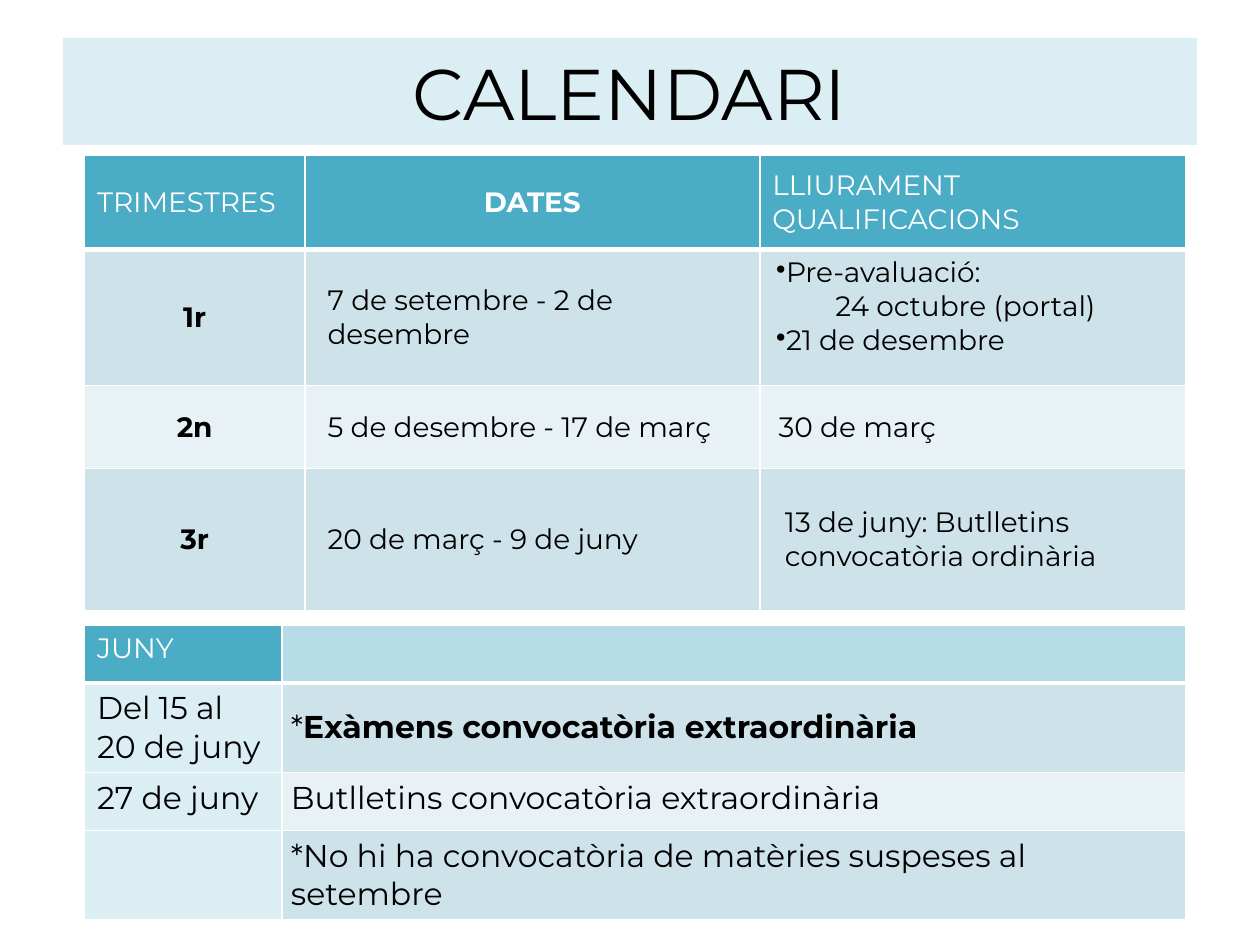
from lxml import etree
from pptx import Presentation
from pptx.dml.color import RGBColor
from pptx.enum.shapes import MSO_SHAPE as Shape
from pptx.enum.text import MSO_ANCHOR as Anchor, PP_ALIGN as Align
from pptx.oxml.ns import qn
from pptx.util import Inches, Pt

FONT = "Montserrat"
BLACK, WHITE = "000000", "FFFFFF"
HEADER, HEADER_PALE = "4BACC6", "B6DDE7"
PALE, BAND, BAND_LIGHT = "DAEEF3", "CEE2EA", "E8F1F5"


def color(value):
    return RGBColor.from_string(value)


def set_fill(item, value):
    item.fill.solid()
    item.fill.fore_color.rgb = color(value)


def add_text(p, text, size=16, bold=False, ink=BLACK, align=Align.LEFT,
             left=0, first=0, bullet=None):
    p.alignment = align
    pPr = p._p.get_or_add_pPr()
    pPr.set("marL", str(Inches(left)))
    pPr.set("indent", str(Inches(first)))
    if bullet:
        etree.SubElement(pPr, qn("a:buChar"), char=bullet)
    r = p.add_run()
    r.text = text
    r.font.name = FONT
    r.font.size = Pt(size)
    r.font.bold = bold
    r.font.color.rgb = color(ink)


def set_borders(cell, bottom=1):
    tcPr = cell._tc.get_or_add_tcPr()
    for side, width in (("L", 1), ("R", 1), ("T", 1), ("B", bottom)):
        ln = etree.SubElement(tcPr, qn(f"a:ln{side}"), w=str(Pt(width)))
        solid = etree.SubElement(ln, qn("a:solidFill"))
        etree.SubElement(solid, qn("a:srgbClr"), val=WHITE)


def add_title(slide, text):
    sp = slide.shapes.add_shape(Shape.RECTANGLE, Inches(0.5), Inches(0.3),
                                Inches(9), Inches(0.85))
    sp.shadow.inherit = False
    set_fill(sp, PALE)
    sp.line.fill.background()
    tf = sp.text_frame
    tf.word_wrap = True
    tf.vertical_anchor = Anchor.MIDDLE
    add_text(tf.paragraphs[0], text, size=41, align=Align.CENTER)


def add_grid(slide, top, widths, heights, fills):
    table = slide.shapes.add_table(len(heights), len(widths), Inches(0.67), Inches(top),
                                   Inches(sum(widths)), Inches(sum(heights))).table
    table.first_row = table.horz_banding = False
    for column, width in zip(table.columns, widths):
        column.width = Inches(width)
    for i, height in enumerate(heights):
        table.rows[i].height = Inches(height)
        for cell, fill in zip(table.rows[i].cells, fills[i]):
            set_borders(cell, bottom=1 if i else 3)
            set_fill(cell, fill)
    return table


def fill_cell(cell, *texts, margin=0.1, anchor=Anchor.MIDDLE, **style):
    cell.vertical_anchor = anchor
    cell.margin_left = Inches(margin)
    cell.margin_right = Inches(min(margin, 0.1))
    tf = cell.text_frame
    for i, (text, extra) in enumerate(texts):
        p = tf.add_paragraph() if i else tf.paragraphs[0]
        add_text(p, text, **{**style, **extra})


def add_terms(slide):
    fills = [[f] * 3 for f in (HEADER, BAND, BAND_LIGHT, BAND)]
    table = add_grid(slide, 1.23, [1.75, 3.61, 3.38], [0.75, 1.08, 0.66, 1.13], fills)
    centered = {"bold": True, "align": Align.CENTER}
    headers = [("TRIMESTRES", {}), ("DATES", centered), ("LLIURAMENT QUALIFICACIONS", {})]
    for col, header in enumerate(headers):
        fill_cell(table.cell(0, col), header, ink=WHITE)
    terms = [("1r", "7 de setembre - 2 de desembre"),
             ("2n", "5 de desembre - 17 de març"),
             ("3r", "20 de març - 9 de juny")]
    for row, (term, dates) in enumerate(terms, 1):
        fill_cell(table.cell(row, 0), (term, centered), margin=0.08)
        fill_cell(table.cell(row, 1), (dates, {"left": 0.1}), margin=0.08)
    item = {"first": 0.03, "bullet": "•"}
    fill_cell(table.cell(1, 2), ("Pre-avaluació:", item),
              ("24 octubre (portal)", {"left": 0.5}),
              ("21 de desembre", item), anchor=Anchor.TOP)
    fill_cell(table.cell(2, 2), ("30 de març", {"left": 0.05}))
    fill_cell(table.cell(3, 2), ("13 de juny: Butlletins convocatòria ordinària", {}),
              margin=0.2)


def add_june(slide):
    fills = [(HEADER, HEADER_PALE), (PALE, BAND), (PALE, BAND_LIGHT), (PALE, BAND)]
    table = add_grid(slide, 4.96, [1.57, 7.17], [0.46, 0.69, 0.46, 0.7], fills)
    fill_cell(table.cell(0, 0), ("JUNY", {}), ink=WHITE, anchor=Anchor.TOP)
    for row, text in enumerate(("Del 15 al 20 de juny", "27 de juny"), 1):
        fill_cell(table.cell(row, 0), (text, {}), size=18, anchor=Anchor.TOP)
    exams = table.cell(1, 1)
    fill_cell(exams, ("*", {}), size=18, margin=0.07)
    add_text(exams.text_frame.paragraphs[0], "Exàmens convocatòria extraordinària",
             size=18, bold=True)
    notes = ("Butlletins convocatòria extraordinària",
             "*No hi ha convocatòria de matèries suspeses al setembre")
    for row, text in enumerate(notes, 2):
        fill_cell(table.cell(row, 1), (text, {}), size=18, margin=0.07, anchor=Anchor.TOP)


def main():
    prs = Presentation()
    prs.slide_width, prs.slide_height = Inches(10), Inches(7.5)
    slide = prs.slides.add_slide(prs.slide_layouts[6])
    add_title(slide, "CALENDARI")
    add_terms(slide)
    add_june(slide)
    prs.save("out.pptx")


if __name__ == "__main__":
    main()
